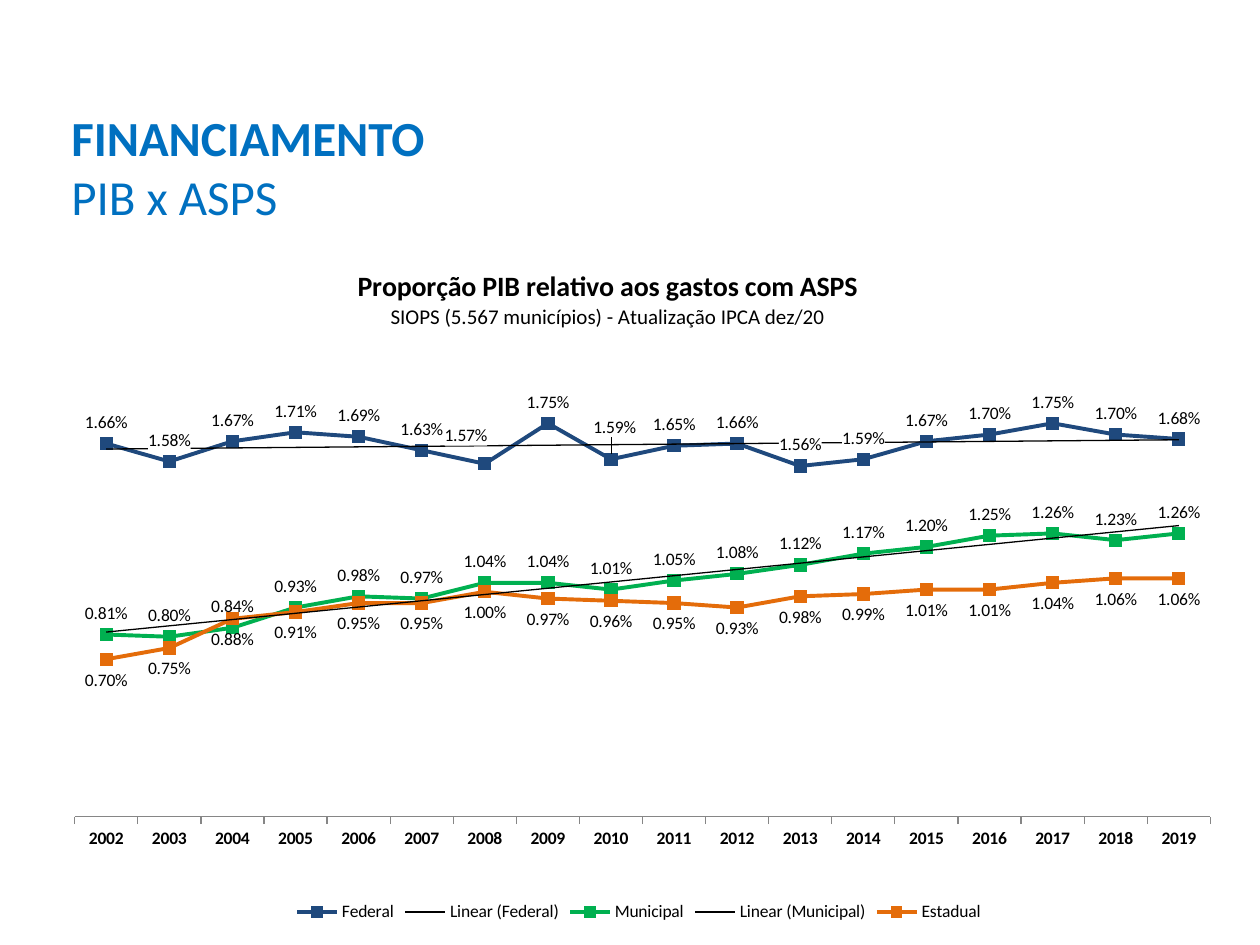
from dataclasses import dataclass

from pptx import Presentation
from pptx import util as u
from pptx.chart.data import CategoryChartData
from pptx.dml.color import RGBColor
from pptx.enum import chart as charts, text
from pptx.oxml import parse_xml
from pptx.oxml.ns import nsdecls

PX = 914400 / 126


@dataclass(frozen=True)
class Theme:
    font: str = "Calibri"
    heading: str = "0070C0"
    ink: str = "000000"
    paper: str = "FFFFFF"
    axis: str = "868686"
    federal: str = "1F497D"
    municipal: str = "00B050"
    state: str = "E46C0A"
    heading_size: int = 28
    title_size: int = 16
    subtitle_size: int = 12
    chart_size: int = 10


THEME = Theme()

# Shares of GDP, in percent
YEARS = [str(year) for year in range(2002, 2020)]
FEDERAL = [1.66, 1.58, 1.67, 1.71, 1.69, 1.63, 1.57, 1.75, 1.59,
           1.65, 1.66, 1.56, 1.59, 1.67, 1.70, 1.75, 1.70, 1.68]
MUNICIPAL = [0.81, 0.80, 0.84, 0.93, 0.98, 0.97, 1.04, 1.04, 1.01,
             1.05, 1.08, 1.12, 1.17, 1.20, 1.25, 1.26, 1.23, 1.26]
STATE = [0.70, 0.75, 0.88, 0.91, 0.95, 0.95, 1.00, 0.97, 0.96,
         0.95, 0.93, 0.98, 0.99, 1.01, 1.01, 1.04, 1.06, 1.06]


def emu(*lengths):
    return [u.Emu(round(length * PX)) for length in lengths]


class Deck:
    def __init__(self, theme, width, height):
        self.theme = theme
        self.presentation = Presentation()
        self.presentation.slide_width, self.presentation.slide_height = emu(width, height)
        self.slide = self.presentation.slides.add_slide(self.presentation.slide_layouts[6])

    def style(self, font, size, color, bold=False):
        font.name = self.theme.font
        font.size = u.Pt(size)
        font.bold = bold
        font.color.rgb = RGBColor.from_string(color)

    def fill_frame(self, frame, lines):
        """Each line is (wording, size, color, bold)."""
        for index, (wording, *look) in enumerate(lines):
            paragraph = frame.add_paragraph() if index else frame.paragraphs[0]
            paragraph.text = wording
            self.style(paragraph.font, *look)

    def text(self, box, lines):
        frame = self.slide.shapes.add_textbox(*emu(*box)).text_frame
        frame.word_wrap = True
        frame.auto_size = text.MSO_AUTO_SIZE.SHAPE_TO_FIT_TEXT
        self.fill_frame(frame, lines)

    def line_chart(self, box, categories, rows):
        data = CategoryChartData(number_format="0.00%")
        data.categories = categories
        for name, percents in rows.items():
            data.add_series(name, [round(value / 100, 4) for value in percents])
        chart = self.slide.shapes.add_chart(
            charts.XL_CHART_TYPE.LINE_MARKERS, *emu(*box), data).chart
        self.style(chart.font, self.theme.chart_size, self.theme.ink)
        chart.plots[0].vary_by_categories = False
        return chart

    def chart_title(self, chart, lines, x, y):
        chart.has_title = True
        title = chart.chart_title
        self.fill_frame(title.text_frame, lines)
        self.layout(title._element, 1, edge=True, x=x, y=y)

    def axes(self, chart, maximum):
        value_axis, category_axis = chart.value_axis, chart.category_axis
        value_axis.minimum_scale, value_axis.maximum_scale = 0, maximum
        value_axis.has_major_gridlines = False
        value_axis.visible = False
        category_axis.major_tick_mark = charts.XL_TICK_MARK.OUTSIDE
        category_axis.format.line.color.rgb = RGBColor.from_string(self.theme.axis)
        self.style(category_axis.tick_labels.font, self.theme.chart_size, self.theme.ink, True)

    def legend(self, chart):
        chart.has_legend = True
        chart.legend.position = charts.XL_LEGEND_POSITION.BOTTOM
        chart.legend.include_in_layout = False
        self.style(chart.legend.font, self.theme.chart_size, self.theme.ink)

    def series(self, series, color, position):
        rgb = RGBColor.from_string(color)
        series.smooth = False
        series.format.line.color.rgb = rgb
        series.format.line.width = u.Pt(2.25)
        marker = series.marker
        marker.style, marker.size = charts.XL_MARKER_STYLE.SQUARE, 7
        marker.format.fill.solid()
        marker.format.fill.fore_color.rgb = rgb
        marker.format.line.color.rgb = rgb
        labels = series.data_labels
        labels.show_value = True
        labels.number_format, labels.number_format_is_linked = "0.00%", False
        labels.position = position
        self.style(labels.font, self.theme.chart_size, self.theme.ink)

    def trend(self, series):
        trendline = parse_xml(
            f'<c:trendline {nsdecls("c", "a")}><c:spPr><a:ln w="{u.Pt(0.75)}"><a:solidFill>'
            f'<a:srgbClr val="{self.theme.ink}"/></a:solidFill></a:ln></c:spPr>'
            '<c:trendlineType val="linear"/><c:dispRSqr val="0"/><c:dispEq val="0"/>'
            '</c:trendline>')
        series._element.xpath("c:cat")[0].addprevious(trendline)

    def move_label(self, series, index, x, y):
        label = series.points[index].data_label
        label.position = charts.XL_LABEL_POSITION.ABOVE
        self.style(label.font, self.theme.chart_size, self.theme.ink)
        element = series._element.xpath(f"c:dLbls/c:dLbl[c:idx/@val='{index}']")[0]
        self.layout(element, 1, x=x, y=y)

    def fill_labels(self, series):
        """Opaque labels, so that lines do not run through the figures."""
        for properties in series._element.xpath("c:dLbls//c:txPr"):
            for old in properties.getparent().xpath("c:spPr"):
                old.getparent().remove(old)
            properties.addprevious(parse_xml(
                f'<c:spPr {nsdecls("c", "a")}><a:solidFill>'
                f'<a:srgbClr val="{self.theme.paper}"/></a:solidFill></c:spPr>'))

    def layout(self, parent, index, inner=False, edge=False, **places):
        for old in parent.xpath("c:layout"):
            parent.remove(old)
        items = '<c:layoutTarget val="inner"/>' if inner else ""
        if edge:
            items += '<c:xMode val="edge"/><c:yMode val="edge"/>'
        items += "".join(f'<c:{key} val="{value}"/>' for key, value in places.items())
        parent.insert(index, parse_xml(
            f'<c:layout {nsdecls("c")}><c:manualLayout>{items}</c:manualLayout></c:layout>'))


def main():
    deck = Deck(THEME, 1260, 945)

    # Line chart
    chart = deck.line_chart((45, 229, 1188, 698), YEARS,
                            {"Federal": FEDERAL, "Municipal": MUNICIPAL, "Estadual": STATE})
    deck.chart_title(chart, [
        ("Proporção PIB relativo aos gastos com ASPS", THEME.title_size, THEME.ink, True),
        ("SIOPS (5.567 municípios) - Atualização IPCA dez/20", THEME.subtitle_size, THEME.ink),
    ], x=0.26, y=0.05)
    deck.axes(chart, maximum=0.02)
    deck.legend(chart)
    deck.layout(chart._chartSpace.xpath("c:chart/c:plotArea")[0], 0, inner=True, edge=True,
                x=0.025, y=0.198, w=0.956, h=0.644)

    # Series, labels and trends
    federal, municipal, state = chart.plots[0].series
    above, below = charts.XL_LABEL_POSITION.ABOVE, charts.XL_LABEL_POSITION.BELOW
    deck.series(federal, THEME.federal, above)
    deck.series(municipal, THEME.municipal, above)
    deck.series(state, THEME.state, below)
    deck.move_label(federal, YEARS.index("2008"), x=-0.016, y=-0.01)
    deck.move_label(federal, YEARS.index("2010"), x=0.003, y=-0.016)
    deck.fill_labels(federal)
    for series in (federal, municipal):
        deck.trend(series)

    # Heading
    deck.text((59, 101, 1097, 131), [
        ("FINANCIAMENTO", THEME.heading_size, THEME.heading, True),
        ("PIB x ASPS", THEME.heading_size, THEME.heading),
    ])

    deck.presentation.save("out.pptx")


if __name__ == "__main__":
    main()
